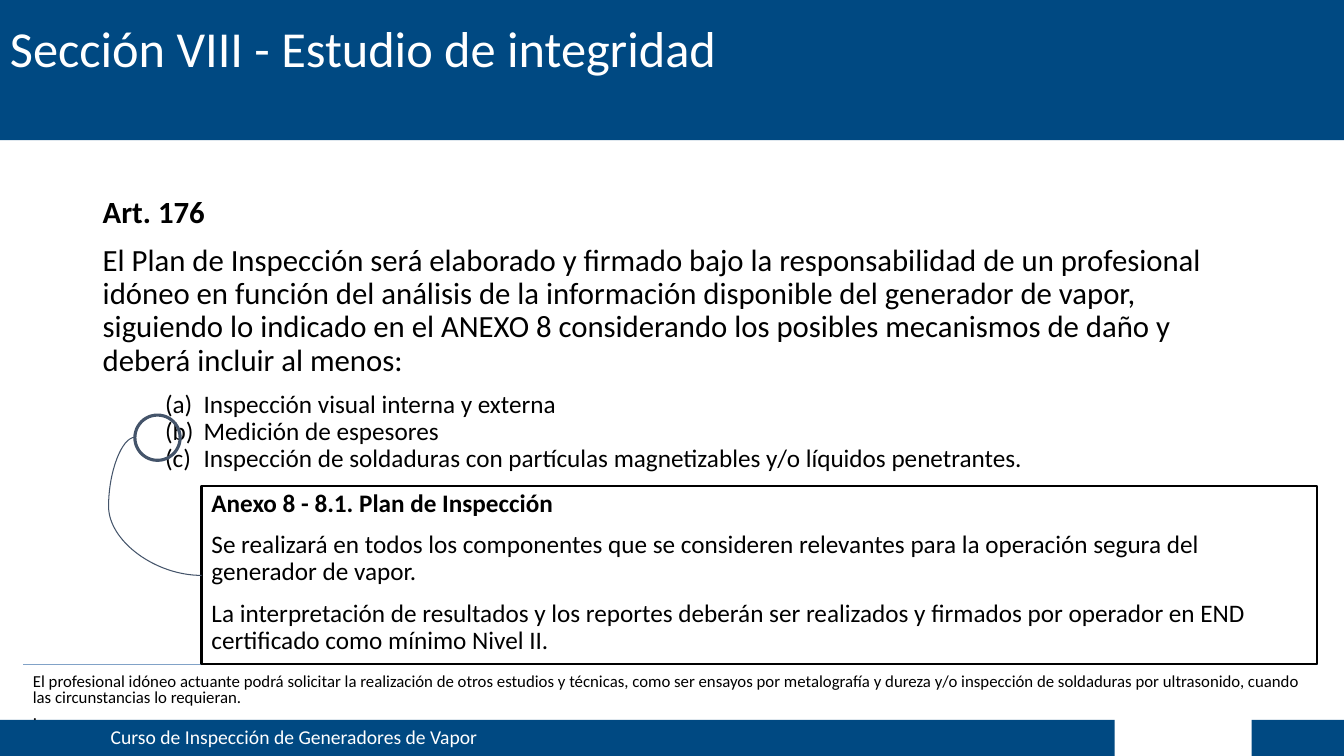
from pptx import Presentation
from pptx.dml.color import RGBColor
from pptx.enum.shapes import MSO_CONNECTOR as Link, MSO_SHAPE as Form
from pptx.enum.text import MSO_ANCHOR as Anchor, PP_ALIGN as Align
from pptx.oxml.ns import qn
from pptx.util import Cm, Pt
from lxml.etree import SubElement as sub

BLUE = RGBColor(0x00, 0x49, 0x82)
SLATE = RGBColor(0x44, 0x54, 0x6A)
PALE = RGBColor(0x81, 0xA2, 0xC7)
BLACK = RGBColor(0, 0, 0)
WHITE = RGBColor(0xFF, 0xFF, 0xFF)

deck = Presentation()
deck.slide_width, deck.slide_height = Cm(33.87), Cm(19.05)
slide = deck.slides.add_slide(deck.slide_layouts[6])
shapes = slide.shapes


def draw(form, left, top, width, height, fill=None, line=None, weight=0):
    shape = shapes.add_shape(form, Cm(left), Cm(top), Cm(width), Cm(height))
    shape.shadow.inherit = False
    if fill is None:
        shape.fill.background()
    else:
        shape.fill.solid()
        shape.fill.fore_color.rgb = fill
    if line is None:
        shape.line.fill.background()
    else:
        shape.line.color.rgb = line
        shape.line.width = Pt(weight)
    return shape


def write(shape, rows, color=BLACK, space=0.9, anchor=Anchor.TOP):
    frame = shape.text_frame
    frame.word_wrap = True
    frame.vertical_anchor = anchor
    for i, (text, size, bold, gap, list_item) in enumerate(rows):
        para = frame.add_paragraph() if i else frame.paragraphs[0]
        para.text = text
        para.alignment = Align.LEFT
        para.line_spacing = space
        para.space_before = Pt(gap if i else 0)
        if list_item:
            props = para._p.get_or_add_pPr()
            props.set("marL", str(Cm(2.54)))
            props.set("indent", str(Cm(-0.97)))
            sub(props, qn("a:buFont"), typeface="+mj-lt")
            sub(props, qn("a:buAutoNum"), type="alphaLcParenBoth")
        para.font.name = "Calibri"
        para.font.size = Pt(size)
        para.font.bold = bold
        para.font.color.rgb = color
    return frame


foot = draw(Form.RECTANGLE, 0, 18.14, 28.09, 0.91, BLUE)
write(foot, [("Curso de Inspección de Generadores de Vapor", 14, False, 0, False)],
      WHITE, anchor=Anchor.MIDDLE).margin_left = Cm(2.79)
draw(Form.RECTANGLE, 31.54, 18.14, 2.33, 0.91, BLUE)

title = draw(Form.RECTANGLE, 0, -0.15, 33.87, 3.68, BLUE)
write(title, [("Sección VIII - Estudio de integridad", 36, False, 0, False)],
      WHITE, anchor=Anchor.MIDDLE).margin_bottom = Cm(0.9)

body = shapes.add_textbox(Cm(2.34), Cm(4.85), Cm(29.21), Cm(7.75))
write(body, [
    ("Art. 176", 22, True, 0, False),
    ("El Plan de Inspección será elaborado y firmado bajo la responsabilidad de un "
     "profesional idóneo en función del análisis de la información disponible del "
     "generador de vapor, siguiendo lo indicado en el ANEXO 8 considerando los "
     "posibles mecanismos de daño y deberá incluir al menos:", 22, False, 10, False),
    ("Inspección visual interna y externa", 18, False, 10, True),
    ("Medición de espesores", 18, False, 0, True),
    ("Inspección de soldaduras con partículas magnetizables y/o líquidos penetrantes.",
     18, False, 0, True),
])

rule = shapes.add_connector(Link.STRAIGHT, Cm(0.58), Cm(16.74), Cm(33.22), Cm(16.74))

note = shapes.add_textbox(Cm(0.58), Cm(17.17), Cm(32.64), Cm(1.8))
write(note, [(text, 12, False, 10, False) for text in (
    "El profesional idóneo actuante podrá solicitar la realización de otros estudios y "
    "técnicas, como ser ensayos por metalografía y dureza y/o inspección de soldaduras "
    "por ultrasonido, cuando",
    "las circunstancias lo requieran.",
    ".",
)], space=0.1)

annex = draw(Form.RECTANGLE, 5.08, 12.24, 28.12, 4.5, line=BLACK, weight=1.5)
write(annex, [
    ("Anexo 8 - 8.1. Plan de Inspección", 18, True, 0, False),
    ("Se realizará en todos los componentes que se consideren relevantes para la "
     "operación segura del generador de vapor.", 18, False, 10, False),
    ("La interpretación de resultados y los reportes deberán ser realizados y firmados "
     "por operador en END certificado como mínimo Nivel II.", 18, False, 10, False),
])

draw(Form.OVAL, 3.4, 10.46, 1.14, 1.14, line=SLATE, weight=2.25)
curve = shapes.add_connector(Link.CURVE, Cm(3.4), Cm(11.02), Cm(5.08), Cm(14.5))
bend = curve._element.spPr.find(qn("a:prstGeom")).find(qn("a:avLst"))
sub(bend, qn("a:gd"), name="adj1", fmla="val -39500")

for link, color in ((rule, PALE), (curve, SLATE)):
    link.line.color.rgb = color
    link.line.width = Pt(0.75)
    sub(link._element.spPr, qn("a:effectLst"))

deck.save("out.pptx")
